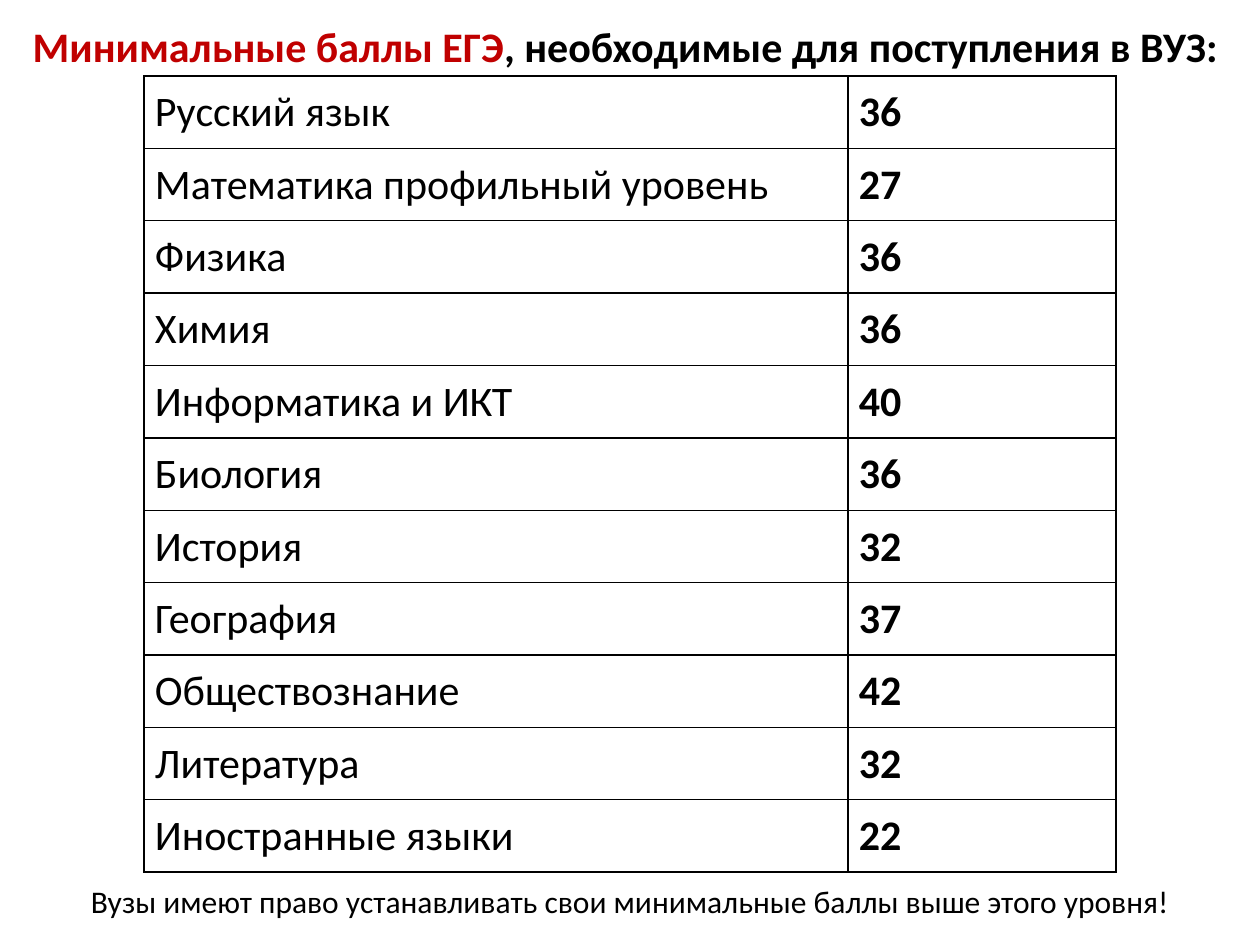
from lxml.etree import SubElement
from pptx import Presentation
from pptx.dml.color import RGBColor
from pptx.enum.text import MSO_ANCHOR as Anchor, PP_ALIGN as Align
from pptx.oxml.ns import qn
from pptx.util import Emu, Pt

SCALE = 914400 / 126
BLACK, RED = "000000", "C00000"
SCORES = [
    ("Русский язык", 36),
    ("Математика профильный уровень", 27),
    ("Физика", 36),
    ("Химия", 36),
    ("Информатика и ИКТ", 40),
    ("Биология", 36),
    ("История", 32),
    ("География", 37),
    ("Обществознание", 42),
    ("Литература", 32),
    ("Иностранные языки", 22),
]


def px(length):
    """Turn pixels into EMU."""
    return Emu(round(length * SCALE))


def color(value):
    """Turn a hex string into a colour."""
    return RGBColor.from_string(value)


class SlideBuilder:
    """Hold the text style and the current slide."""

    font = "Calibri"

    def __init__(self, slide):
        """Keep the slide to draw on."""
        self.slide = slide

    def run(self, para, text, size, bold=False, ink=BLACK):
        """Add one styled run to a paragraph."""
        span = para.add_run()
        span.text = text
        span.font.name = self.font
        span.font.size = Pt(size)
        span.font.bold = bold
        span.font.color.rgb = color(ink)

    def text(self, left, top, width, height, runs, size, bold=False, anchor=Anchor.TOP):
        """Add a centred text box made of (text, colour) runs."""
        box = self.slide.shapes.add_textbox(px(left), px(top), px(width), px(height))
        frame = box.text_frame
        frame.word_wrap = True
        frame.vertical_anchor = anchor
        para = frame.paragraphs[0]
        para.alignment = Align.CENTER
        for text, ink in runs:
            self.run(para, text, size, bold, ink)

    def borders(self, cell):
        """Draw a thin black line on each side of a cell."""
        properties = cell._tc.get_or_add_tcPr()
        for index, side in enumerate(("lnL", "lnR", "lnT", "lnB")):
            line = properties.makeelement(qn(f"a:{side}"), {"w": str(Pt(1))})
            properties.insert(index, line)
            fill = SubElement(line, qn("a:solidFill"))
            SubElement(fill, qn("a:srgbClr"), val=BLACK)

    def table(self, left, top, widths, height, row_height, rows, size):
        """Add a bordered table whose last column is bold."""
        shape = self.slide.shapes.add_table(
            len(rows), len(widths), px(left), px(top), px(sum(widths)), px(height))
        table = shape.table
        table.first_row = table.horz_banding = False
        for column, width in zip(table.columns, widths):
            column.width = px(width)
        for row, values in zip(table.rows, rows):
            row.height = px(row_height)
            for index, (cell, value) in enumerate(zip(row.cells, values)):
                cell.fill.background()
                cell.vertical_anchor = Anchor.MIDDLE
                cell.margin_left = cell.margin_right = px(11)
                cell.margin_top = cell.margin_bottom = px(11)
                last = index == len(widths) - 1
                self.run(cell.text_frame.paragraphs[0], str(value), size, last)
                self.borders(cell)


def main():
    """Build the slide of minimum exam scores."""
    deck = Presentation()
    deck.slide_width, deck.slide_height = px(1260), px(945)
    page = SlideBuilder(deck.slides.add_slide(deck.slide_layouts[6]))
    title = [("Минимальные баллы ЕГЭ", RED),
             (", необходимые для поступления в ВУЗ:", BLACK)]
    page.text(15, 16, 1221, 59, title, 24, True, Anchor.MIDDLE)
    page.table(144, 76, (704, 268), 795, 69, SCORES, 24)
    note = "Вузы имеют право устанавливать свои минимальные баллы выше этого уровня!"
    page.text(0, 876, 1260, 50, [(note, BLACK)], 18)
    deck.save("out.pptx")


if __name__ == "__main__":
    main()
